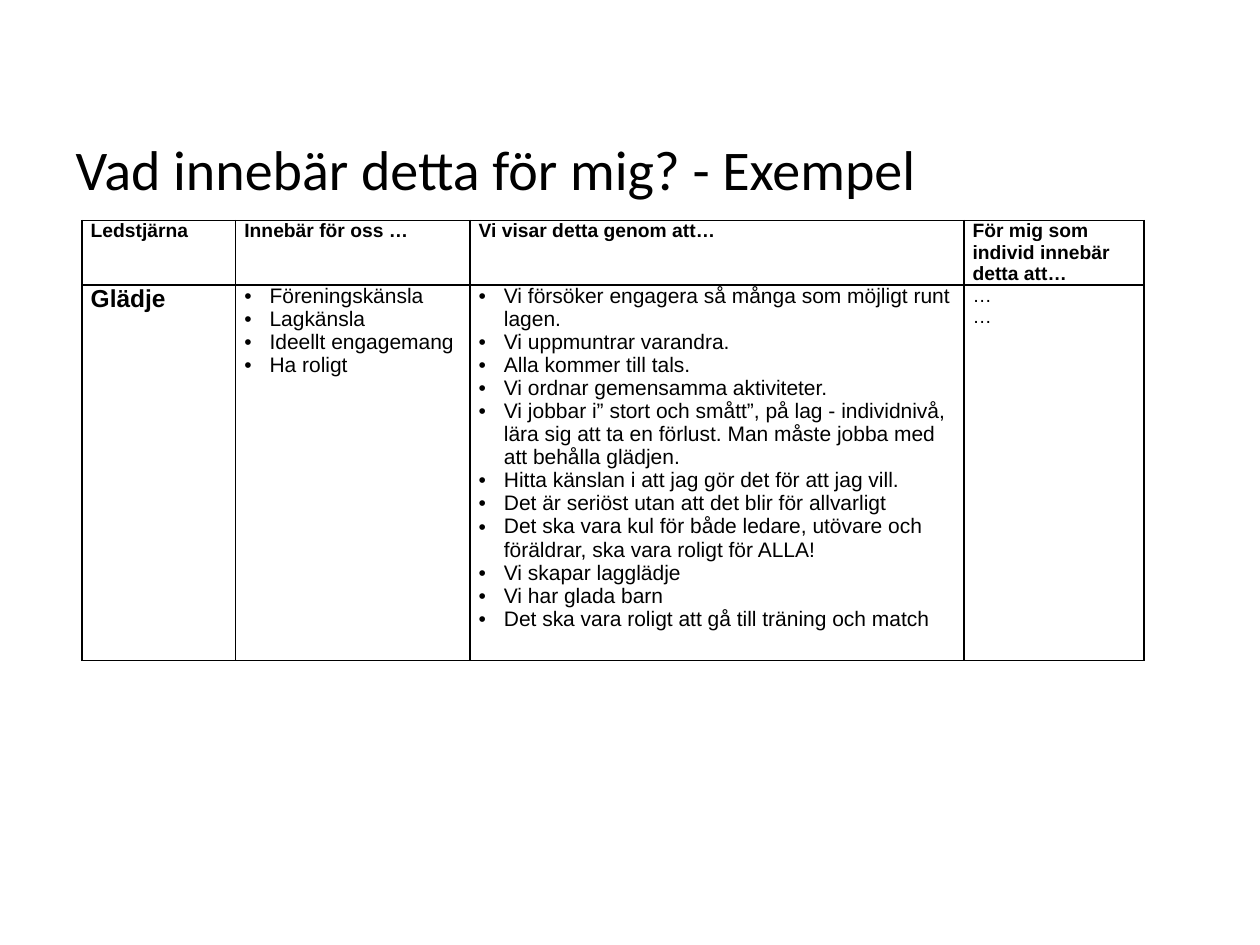
from dataclasses import dataclass

from lxml import etree
from pptx import Presentation
from pptx.dml.color import RGBColor
from pptx.enum.text import MSO_ANCHOR, PP_ALIGN
from pptx.oxml.ns import qn
from pptx.util import Inches, Pt

LEFT, MIDDLE, TOP = PP_ALIGN.LEFT, MSO_ANCHOR.MIDDLE, MSO_ANCHOR.TOP
TITLE_ONLY = 5


@dataclass(frozen=True)
class Theme:
    ink: str = "000000"
    heading: str = "Calibri"
    body: str = "Arial"
    title: int = 32
    name: int = 14
    item: int = 12
    label: int = 11
    border: int = 1


THEME = Theme()

TITLE = "Vad innebär detta för mig? - Exempel"
HEADERS = ["Ledstjärna", "Innebär för oss …", "Vi visar detta genom att…",
           "För mig som individ innebär detta att…"]
MEANINGS = ["Föreningskänsla", "Lagkänsla", "Ideellt engagemang", "Ha roligt"]
ACTIONS = [
    "Vi försöker engagera så många som möjligt runt lagen.",
    "Vi uppmuntrar varandra.",
    "Alla kommer till tals.",
    "Vi ordnar gemensamma aktiviteter.",
    "Vi jobbar i” stort och smått”, på lag - individnivå, lära sig att ta en "
    "förlust. Man måste jobba med att behålla glädjen.",
    "Hitta känslan i att jag gör det för att jag vill.",
    "Det är seriöst utan att det blir för allvarligt",
    "Det ska vara kul för både ledare, utövare och föräldrar, ska vara roligt "
    "för ALLA!",
    "Vi skapar lagglädje",
    "Vi har glada barn",
    "Det ska vara roligt att gå till träning och match",
]
COLUMN_WIDTHS = [1.22, 1.86, 3.92, 1.43]
ROW_HEIGHTS = [0.51, 2.98]


def write(tf, lines, size, font=THEME.body, bold=False, indent=0, bullet=None,
          spacing=None):
    """Fill a text frame with one paragraph per line."""
    for i, line in enumerate(lines):
        p = tf.paragraphs[0] if i == 0 else tf.add_paragraph()
        p.alignment = LEFT
        if spacing:
            p.line_spacing = spacing
        pPr = p._p.get_or_add_pPr()
        pPr.set("marL", str(Inches(indent)))
        pPr.set("indent", str(-Inches(indent)))
        if bullet:
            etree.SubElement(pPr, qn("a:buFont"), typeface=font)
            etree.SubElement(pPr, qn("a:buChar"), char=bullet)
        r = p.add_run()
        r.text = line
        r.font.name, r.font.size, r.font.bold = font, Pt(size), bold
        r.font.color.rgb = RGBColor.from_string(THEME.ink)


def format_cell(cell):
    """Clear the fill, set the margins and draw all four borders."""
    cell.fill.background()
    cell.vertical_anchor = TOP
    cell.margin_left = cell.margin_right = Inches(0.07)
    cell.margin_top = cell.margin_bottom = 0
    tcPr = cell._tc.get_or_add_tcPr()
    for i, side in enumerate(("lnL", "lnR", "lnT", "lnB")):
        ln = etree.Element(qn(f"a:{side}"), w=str(Pt(THEME.border)))
        fill = etree.SubElement(ln, qn("a:solidFill"))
        etree.SubElement(fill, qn("a:srgbClr"), val=THEME.ink)
        tcPr.insert(i, ln)


def add_title(s, left, top, width, height):
    sp = s.shapes.title
    sp.left, sp.top, sp.width, sp.height = map(Inches, (left, top, width, height))
    tf = sp.text_frame
    tf.word_wrap = True
    tf.vertical_anchor = MIDDLE
    write(tf, [TITLE], THEME.title, font=THEME.heading, indent=0.39)


def add_value_table(s, left, top):
    box = map(Inches, (left, top, sum(COLUMN_WIDTHS), sum(ROW_HEIGHTS)))
    table = s.shapes.add_table(len(ROW_HEIGHTS), len(COLUMN_WIDTHS), *box).table
    table.horz_banding = table.first_row = False
    for column, width in zip(table.columns, COLUMN_WIDTHS):
        column.width = Inches(width)
    for row, height in zip(table.rows, ROW_HEIGHTS):
        row.height = Inches(height)
    for cell in table.iter_cells():
        format_cell(cell)

    # Header row
    for col, header in enumerate(HEADERS):
        write(table.cell(0, col).text_frame, [header], THEME.label, bold=True)

    # Value row
    name, meanings, actions, personal = [
        table.cell(1, col).text_frame for col in range(len(HEADERS))]
    write(name, ["Glädje"], THEME.name, bold=True)
    for tf, items in ((meanings, MEANINGS), (actions, ACTIONS)):
        write(tf, items, THEME.item, indent=0.2, bullet="•", spacing=0.98)
    write(personal, ["…", "…"], THEME.label)


def main():
    prs = Presentation()
    prs.slide_width, prs.slide_height = Inches(10), Inches(7.5)
    s = prs.slides.add_slide(prs.slide_layouts[TITLE_ONLY])
    add_title(s, 0.5, 0.92, 9, 0.83)
    add_value_table(s, 0.65, 1.75)
    prs.save("out.pptx")


if __name__ == "__main__":
    main()
